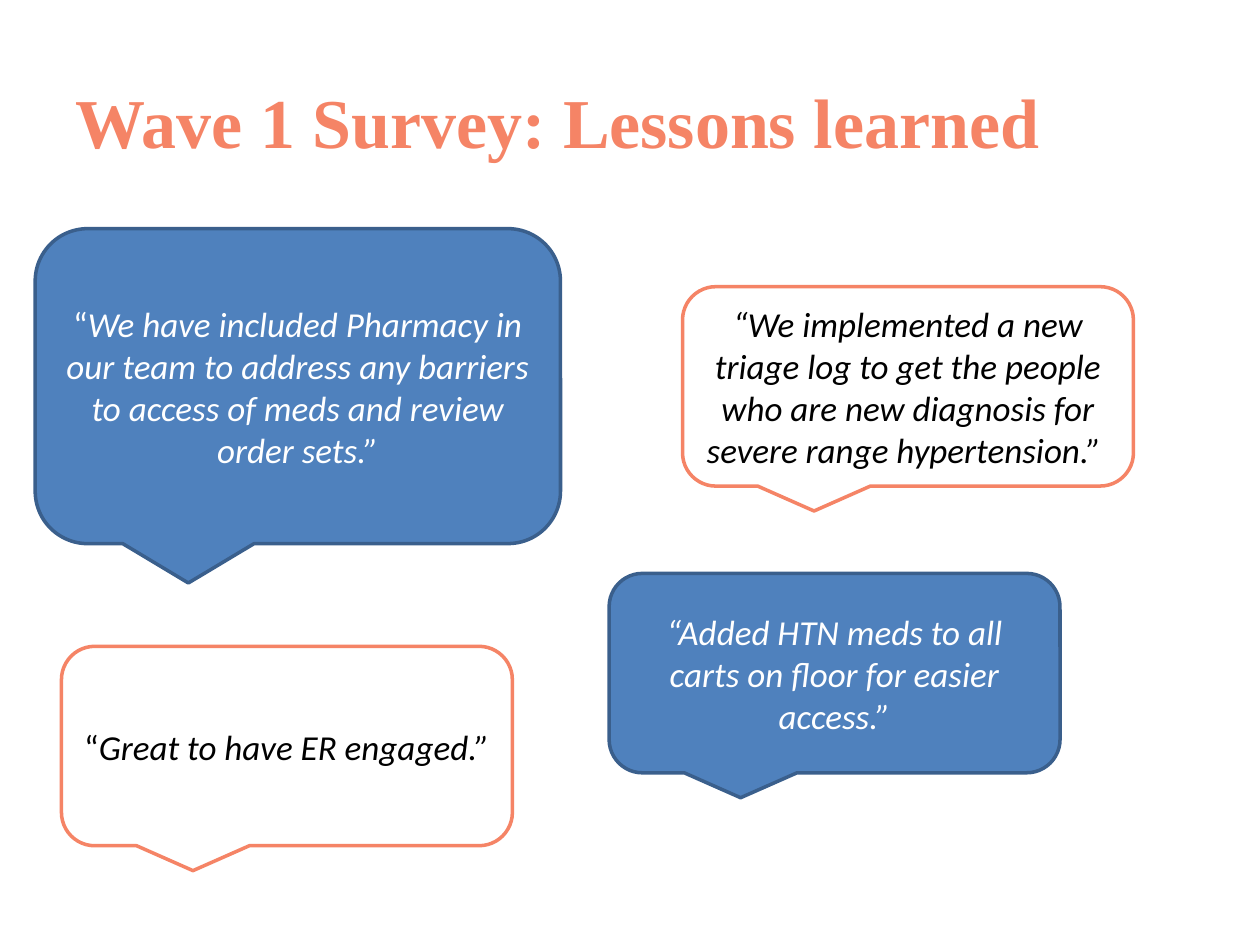
import pptx
import pptx.util
import pptx.dml.color
import pptx.enum.shapes
import pptx.enum.text

CORAL, BLUE, DARK_BLUE = "F58466", "4F81BD", "3A5F8C"
WHITE, BLACK = "FFFFFF", "000000"

# Callout styles: fill, line, text
SOLID = (BLUE, DARK_BLUE, WHITE)
OUTLINED = (WHITE, CORAL, BLACK)

SMALL = (9.09, 4.02)
LARGE = (10.59, 6.35)

# Left, top, size, style, upright opening, italic quote
QUOTES = [
    (1.24, 13.03, SMALL, OUTLINED, "“", "Great to have ER engaged.”"),
    (12.28, 11.56, SMALL, SOLID, "",
     "“Added HTN meds to all carts on floor for easier access.”"),
    (13.76, 5.78, SMALL, OUTLINED, "",
     "“We implemented a new triage log to get the people who are new "
     "diagnosis for severe range hypertension.” "),
    (0.71, 4.61, LARGE, SOLID, "“",
     "We have included Pharmacy in our team to address any barriers "
     "to access of meds and review order sets.”"),
]


def color(hex_string):
    return pptx.dml.color.RGBColor.from_string(hex_string)


def set_title(slide, left, top, width, height, text):
    title = slide.shapes.title
    title.left, title.top = pptx.util.Cm(left), pptx.util.Cm(top)
    title.width, title.height = pptx.util.Cm(width), pptx.util.Cm(height)
    frame = title.text_frame
    frame.text = text
    frame.vertical_anchor = pptx.enum.text.MSO_ANCHOR.MIDDLE
    paragraph = frame.paragraphs[0]
    paragraph.alignment = pptx.enum.text.PP_ALIGN.LEFT
    font = paragraph.font
    font.name, font.size, font.bold = "Times New Roman", pptx.util.Pt(40), True
    font.color.rgb = color(CORAL)


def add_quote(slide, left, top, size, style, opening, quote):
    fill_color, line_color, text_color = style
    width, height = size
    callout = slide.shapes.add_shape(
        pptx.enum.shapes.MSO_SHAPE.ROUNDED_RECTANGULAR_CALLOUT,
        pptx.util.Cm(left), pptx.util.Cm(top),
        pptx.util.Cm(width), pptx.util.Cm(height))
    callout.shadow.inherit = False
    callout.fill.solid()
    callout.fill.fore_color.rgb = color(fill_color)
    callout.line.color.rgb = color(line_color)
    callout.line.width = pptx.util.Pt(2)

    # Quote text
    frame = callout.text_frame
    frame.word_wrap = True
    frame.vertical_anchor = pptx.enum.text.MSO_ANCHOR.MIDDLE
    paragraph = frame.paragraphs[0]
    paragraph.alignment = pptx.enum.text.PP_ALIGN.CENTER
    paragraph.font.name, paragraph.font.size = "Calibri", pptx.util.Pt(20)
    paragraph.font.color.rgb = color(text_color)
    if opening:
        paragraph.add_run().text = opening
    run = paragraph.add_run()
    run.text = quote
    run.font.italic = True


def main():
    presentation = pptx.Presentation()
    presentation.slide_width = pptx.util.Cm(25.4)
    presentation.slide_height = pptx.util.Cm(19.05)
    title_only = presentation.slide_layouts[5]
    slide = presentation.slides.add_slide(title_only)
    set_title(slide, 1.27, 0.84, 22.86, 3.18, "Wave 1 Survey: Lessons learned")
    for quote in QUOTES:
        add_quote(slide, *quote)
    presentation.save("out.pptx")


if __name__ == "__main__":
    main()
